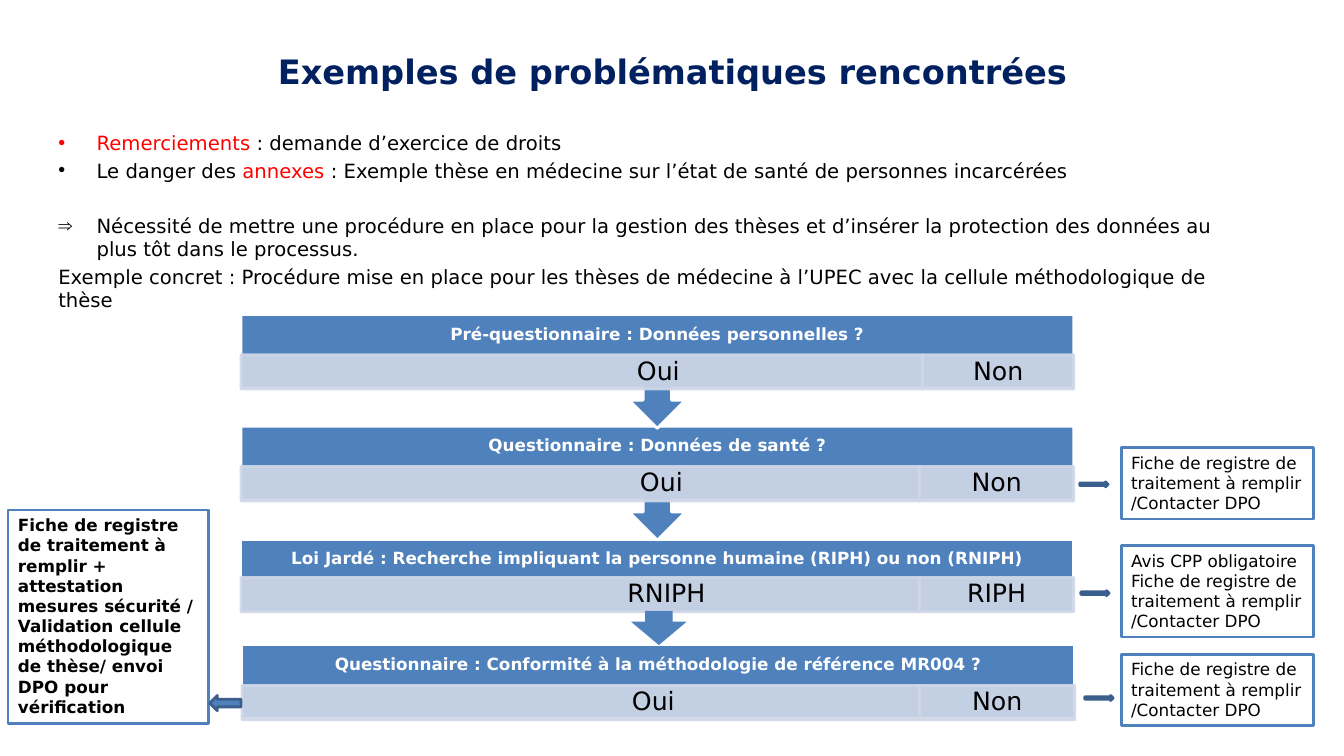
from lxml.etree import SubElement
from pptx import Presentation
from pptx.dml.color import RGBColor
from pptx.enum.shapes import MSO_SHAPE
from pptx.enum.text import MSO_ANCHOR, PP_ALIGN
from pptx.oxml.ns import qn
from pptx.util import Inches, Pt

FONT = "DejaVu Sans"
BLUE, PALE, NAVY, DARK = "4F81BD", "D0D8E8", "002060", "3A5F8C"
RED, BLACK, WHITE = "FF0000", "000000", "FFFFFF"

TITLE = "Exemples de problématiques rencontrées"
# bullet, space before in points, runs
BODY = [
    ("•", 2.8, [("Remerciements", RED), (" : demande d’exercice de droits", BLACK)]),
    ("•", 2.8, [("Le danger des ", BLACK), ("annexes", RED),
                (" : Exemple thèse en médecine sur l’état de santé de personnes incarcérées", BLACK)]),
    ("⇒", 22.5, [("Nécessité de mettre une procédure en place pour la gestion des thèses et d’insérer "
                  "la protection des données au plus tôt dans le processus.", BLACK)]),
    (None, 2.8, [("Exemple concert : Procédure mise en place pour les thèses de médecine à l’UPEC avec "
                  "la cellule méthodologique de thèse".replace("concert", "concret"), BLACK)]),
]
# left, top, answer top, split, question, (answer, its centre), second answer, arrow below
STEPS = [
    (2.39, 3.12, 3.52, 9.15, "Pré-questionnaire : Données personnelles ?", ("Oui", 6.53), "Non", True),
    (2.39, 4.23, 4.63, 9.12, "Questionnaire : Données de santé ?", ("Oui", 6.56), "Non", True),
    (2.39, 5.35, 5.73, 9.12, "Loi Jardé : Recherche impliquant la personne humaine (RIPH) ou non (RNIPH)",
     ("RNIPH", 6.61), "RIPH", False),
    (2.4, 6.4, 6.8, 9.12, "Questionnaire : Conformité à la méthodologie de référence MR004 ?",
     ("Oui", 6.48), "Non", False),
]
STEP_WIDTH, HEADER_HEIGHT, ANSWER_HEIGHT = 8.26, 0.73, 0.34
RECORD = "Fiche de registre de traitement à remplir /Contacter DPO"
# left, top, width, height, text, bold
OUTCOMES = [
    (11.12, 4.44, 1.91, 0.71, RECORD, False),
    (11.12, 5.41, 1.91, 0.91, "Avis CPP obligatoire " + RECORD, False),
    (11.12, 6.49, 1.91, 0.71, RECORD, False),
    (0.08, 5.06, 1.99, 2.12, "Fiche de registre de traitement à remplir + attestation mesures sécurité / "
     "Validation cellule méthodologique de thèse/ envoi DPO pour vérification", True),
]
# left, top, width, height, rotation
SIDE_ARROWS = [(10.71, 4.78, 0.28, 0.05, 0), (10.72, 5.86, 0.28, 0.05, 0),
               (10.76, 6.9, 0.28, 0.05, 0), (2.08, 6.9, 0.31, 0.15, 180)]


def color(hex_code):
    return RGBColor.from_string(hex_code)


def paint(shape, fill, line=None, opacity=100):
    shape.shadow.inherit = False
    shape.fill.solid()
    shape.fill.fore_color.rgb = color(fill)
    if line:
        shape.line.color.rgb = color(line)
        shape.line.width = Pt(2)
    else:
        shape.line.fill.background()
    if opacity < 100:
        for node in shape._element.spPr.iter(qn("a:srgbClr")):
            SubElement(node, qn("a:alpha"), val=str(opacity * 1000))


def add_span(para, text, size, hex_code, bold=False):
    span = para.add_run()
    span.text = text
    span.font.name, span.font.size, span.font.bold = FONT, Pt(size), bold
    span.font.color.rgb = color(hex_code)


def prepare_frame(shape, anchor, insets=(0.1, 0.05, 0.1, 0.05)):
    """Set wrapping, anchor and left, top, right, bottom insets."""
    frame = shape.text_frame
    frame.word_wrap = True
    frame.vertical_anchor = anchor
    (frame.margin_left, frame.margin_top,
     frame.margin_right, frame.margin_bottom) = map(Inches, insets)
    return frame


def add_outline(slide, points):
    corners = [(Inches(x), Inches(y)) for x, y in points]
    builder = slide.shapes.build_freeform(*corners[0], scale=1.0)
    builder.add_line_segments(corners[1:], close=True)
    return builder.convert_to_shape()


def add_centred(shape, text, size, hex_code, bold, insets):
    para = prepare_frame(shape, MSO_ANCHOR.MIDDLE, insets).paragraphs[0]
    para.alignment = PP_ALIGN.CENTER
    para.line_spacing = 0.9
    add_span(para, text, size, hex_code, bold)


def add_answer(slide, left, right, top, text, centre):
    bottom = top + ANSWER_HEIGHT
    cell = add_outline(slide, [(left, top), (right, top), (right, bottom), (left, bottom)])
    paint(cell, PALE, PALE, opacity=90)
    inset = 0.14 + 2 * centre - left - right
    add_centred(cell, text, 18, BLACK, False, (inset, 0.03, 0.14, 0.03))


def add_step(slide, left, top, answer_top, split, question, answer, other, arrow):
    right, bottom, middle = left + STEP_WIDTH, top + HEADER_HEIGHT, left + STEP_WIDTH / 2
    points = [(left, bottom), (left, top), (right, top), (right, bottom)]
    if arrow:
        neck, tip = bottom + 0.12, bottom + 0.4
        points += [(middle + 0.14, bottom), (middle + 0.14, neck), (middle + 0.28, neck),
                   (middle, tip),
                   (middle - 0.28, neck), (middle - 0.14, neck), (middle - 0.14, bottom)]
    header = add_outline(slide, points)
    paint(header, BLUE, WHITE)
    add_centred(header, question, 12, WHITE, True, (0.09, 0.09, 0.09, 0.82 if arrow else 0.43))
    add_answer(slide, left, split, answer_top, *answer)
    add_answer(slide, split, right, answer_top, other, (split + right) / 2)


def add_preset(slide, kind, left, top, width, height):
    return slide.shapes.add_shape(kind, *map(Inches, (left, top, width, height)))


def add_body(slide):
    box = slide.shapes.add_textbox(*map(Inches, (0.48, 1.25, 12, 1.88)))
    frame = prepare_frame(box, MSO_ANCHOR.TOP)
    for number, (bullet, before, spans) in enumerate(BODY):
        para = frame.add_paragraph() if number else frame.paragraphs[0]
        para.space_before = Pt(before)
        if bullet:
            properties = para._p.get_or_add_pPr()
            properties.set("marL", str(Inches(0.38)))
            properties.set("indent", str(-Inches(0.38)))
            SubElement(properties, qn("a:buFont"), typeface="Arial")
            SubElement(properties, qn("a:buChar"), char=bullet)
        for text, hex_code in spans:
            add_span(para, text, 14, hex_code)


def main():
    deck = Presentation()
    deck.slide_width, deck.slide_height = Inches(13.33), Inches(7.5)
    slide = deck.slides.add_slide(deck.slide_layouts[6])

    title = slide.shapes.add_textbox(*map(Inches, (0.67, 0.3, 12, 0.81)))
    para = prepare_frame(title, MSO_ANCHOR.MIDDLE).paragraphs[0]
    para.alignment = PP_ALIGN.CENTER
    add_span(para, TITLE, 24, NAVY, True)
    add_body(slide)

    for step in reversed(STEPS):
        add_step(slide, *step)
    down = add_preset(slide, MSO_SHAPE.DOWN_ARROW, 6.26, 6.06, 0.55, 0.34)
    down.adjustments[0], down.adjustments[1] = 0.5, 0.68
    paint(down, BLUE)

    for *place, text, bold in OUTCOMES:
        box = add_preset(slide, MSO_SHAPE.RECTANGLE, *place)
        paint(box, WHITE, BLUE)
        para = prepare_frame(box, MSO_ANCHOR.TOP).paragraphs[0]
        para.alignment = PP_ALIGN.LEFT
        add_span(para, text, 12, BLACK, bold)
    for *place, rotation in SIDE_ARROWS:
        arrow = add_preset(slide, MSO_SHAPE.RIGHT_ARROW, *place)
        arrow.rotation = rotation
        paint(arrow, BLUE, DARK)

    deck.save("out.pptx")


if __name__ == "__main__":
    main()
